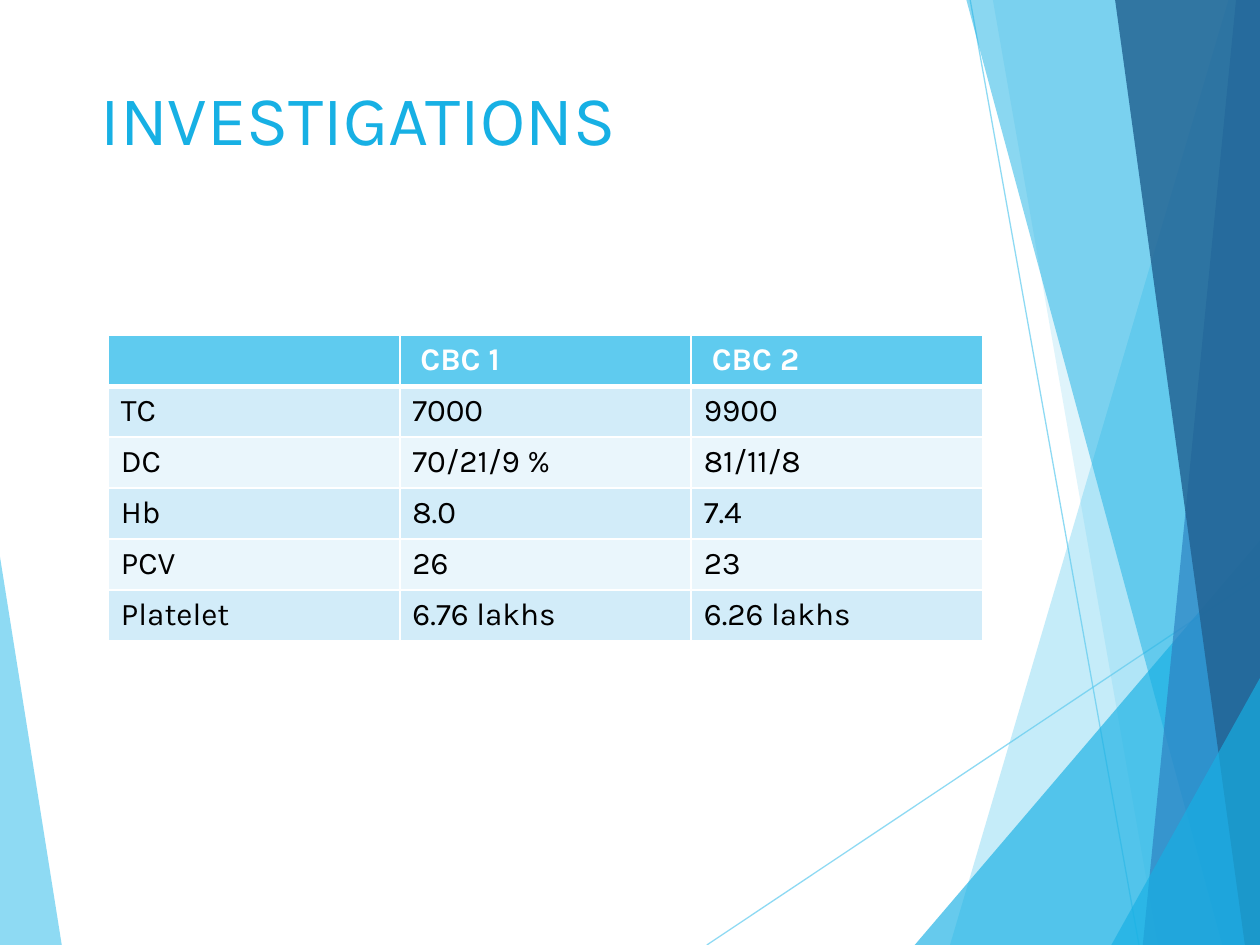
from collections import namedtuple
from dataclasses import dataclass

from lxml import etree
from pptx import Presentation
from pptx.dml.color import RGBColor
from pptx.enum.shapes import MSO_CONNECTOR
from pptx.oxml.ns import qn
from pptx.util import Inches, Pt

Box = namedtuple("Box", "left top width height")


@dataclass(frozen=True)
class Theme:
    font: str = "Karla"
    title_size: int = 40
    table_size: int = 18
    sky: str = "5FCBEF"
    bright: str = "17B0E4"
    blue: str = "2E83C3"
    navy: str = "226292"
    band_dark: str = "D2ECF9"
    band_light: str = "EAF6FC"
    white: str = "FFFFFF"
    black: str = "000000"


THEME = Theme()

# Facets: corner points, colour, opacity in percent
LEFT_FACETS = [
    ([(0, 4.42), (0.49, 7.5), (0, 7.5)], THEME.sky, 70),
]
RIGHT_FACETS = [
    ([(9.75, 0), (7.54, 7.5), (10, 7.5), (10, 0)], THEME.sky, 36),
    ([(7.88, 0), (9.19, 7.5), (10, 7.5), (10, 0)], THEME.sky, 20),
    ([(7.26, 7.5), (10, 4.29), (10, 7.5)], THEME.bright, 66),
    ([(7.67, 0), (9.7, 7.5), (10, 7.5), (10, 0)], THEME.bright, 50),
    ([(9.81, 0), (9.07, 7.5), (10, 7.5), (10, 0)], THEME.blue, 70),
    ([(8.85, 0), (9.88, 7.5), (10, 7.5), (10, 0)], THEME.navy, 82),
    ([(8.82, 7.5), (10, 5.38), (10, 7.5)], THEME.bright, 66),
]
RAYS = [((5.61, 7.5), (10, 4.57)), ((7.7, 0), (9.04, 7.5))]

RESULTS = [
    ("", " CBC 1", " CBC 2"),
    ("TC", "7000", "9900"),
    ("DC", "70/21/9 %", "81/11/8"),
    ("Hb", "8.0", "7.4"),
    ("PCV", "26", "23"),
    ("Platelet", "6.76 lakhs", "6.26 lakhs"),
]


def paint(fill, color, opacity=100):
    """Give a fill one solid colour, see-through if asked."""
    fill.solid()
    fill.fore_color.rgb = RGBColor.from_string(color)
    if opacity < 100:
        for node in fill._xPr.iter(qn("a:srgbClr")):
            etree.SubElement(node, qn("a:alpha"), val=str(opacity * 1000))


def write(frame, text, *, size, color, bold=False):
    span = frame.paragraphs[0].add_run()
    span.text = text
    span.font.name = THEME.font
    span.font.size = Pt(size)
    span.font.bold = bold
    span.font.color.rgb = RGBColor.from_string(color)


def add_facet(page, box, points, color, opacity):
    corners = [(Inches(box.left + x), Inches(box.top + y)) for x, y in points]
    builder = page.shapes.build_freeform(*corners[0])
    builder.add_line_segments(corners[1:], close=True)
    facet = builder.convert_to_shape()
    facet.shadow.inherit = False
    paint(facet.fill, color, opacity)
    facet.line.fill.background()


def add_ray(page, box, start, end):
    ends = [Inches(value) for x, y in (start, end)
            for value in (box.left + x, box.top + y)]
    ray = page.shapes.add_connector(MSO_CONNECTOR.STRAIGHT, *ends)
    ray.line.width = Pt(0.75)
    paint(ray.line.fill, THEME.sky, 70)
    etree.SubElement(ray._element.spPr, qn("a:effectLst"))


def add_backdrop(page, box):
    for facet in LEFT_FACETS:
        add_facet(page, box, *facet)
    for ray in RAYS:
        add_ray(page, box, *ray)
    for facet in RIGHT_FACETS:
        add_facet(page, box, *facet)


def add_title(page, box, text):
    frame = page.shapes.add_textbox(*map(Inches, box)).text_frame
    frame.word_wrap = False
    write(frame, text, size=THEME.title_size, color=THEME.bright)


def add_borders(cell, bottom_width):
    """Draw white cell edges; they must come before the cell's fill."""
    widths = {"a:lnL": 1, "a:lnR": 1, "a:lnT": 1, "a:lnB": bottom_width}
    properties = cell._tc.get_or_add_tcPr()
    for tag, width in widths.items():
        edge = etree.SubElement(properties, qn(tag), w=str(Pt(width)))
        solid = etree.SubElement(edge, qn("a:solidFill"))
        etree.SubElement(solid, qn("a:srgbClr"), val=THEME.white)


def add_results_table(page, box, rows):
    table = page.shapes.add_table(
        len(rows), len(rows[0]), *map(Inches, box)).table
    for column in table.columns:
        column.width = Inches(box.width / len(rows[0]))
    for index, values in enumerate(rows):
        table.rows[index].height = Inches(box.height / len(rows))
        header = index == 0
        band = THEME.band_dark if index % 2 else THEME.band_light
        for cell, text in zip(table.rows[index].cells, values):
            add_borders(cell, 3 if header else 1)
            paint(cell.fill, THEME.sky if header else band)
            if text:
                write(cell.text_frame, text, size=THEME.table_size, bold=header,
                      color=THEME.white if header else THEME.black)


def main():
    deck = Presentation()
    deck.slide_width, deck.slide_height = Inches(10), Inches(7.5)
    page = deck.slides.add_slide(deck.slide_layouts[6])
    paint(page.background.fill, THEME.white)

    add_backdrop(page, Box(0, 0, 10, 7.5))
    add_results_table(page, Box(0.86, 2.66, 6.94, 2.43), RESULTS)
    add_title(page, Box(0.7, 0.55, 4.3, 0.77), "INVESTIGATIONS")

    deck.save("out.pptx")


if __name__ == "__main__":
    main()
